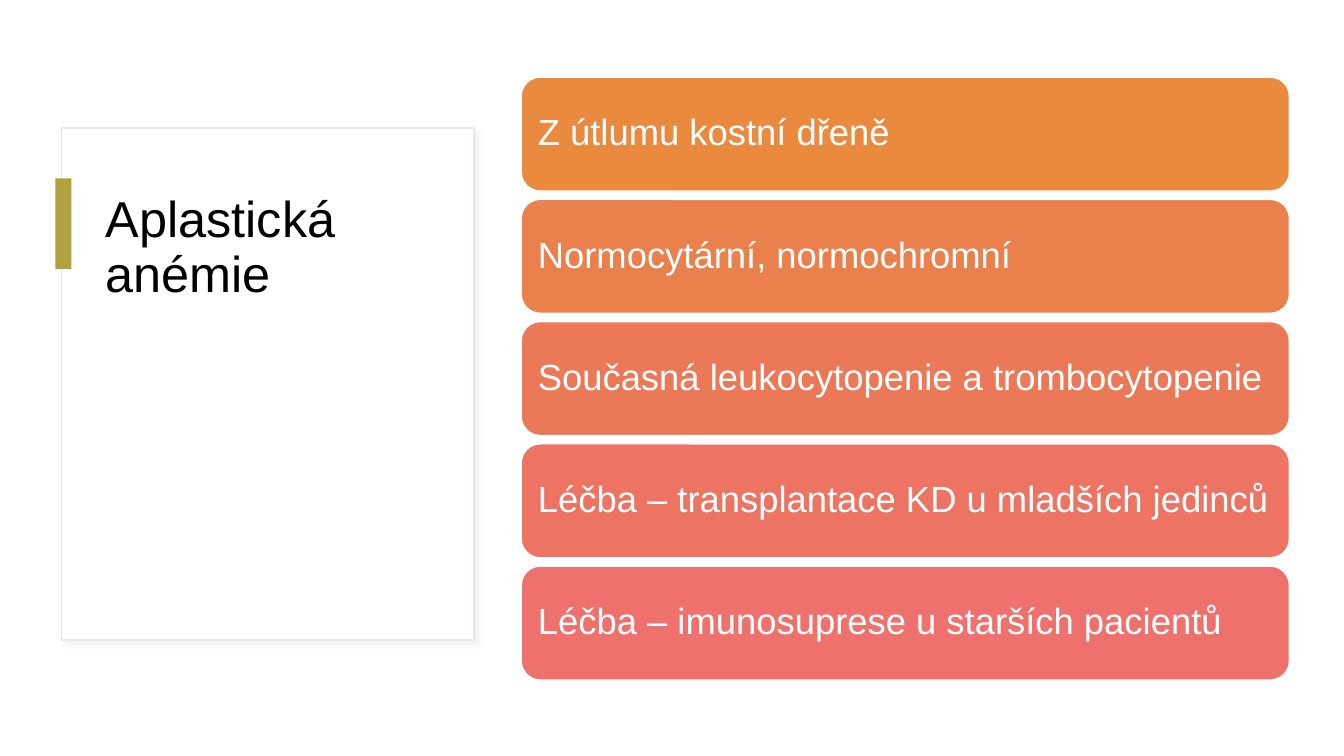
import dataclasses

import lxml.etree
import pptx
import pptx.dml.color
import pptx.enum.shapes
import pptx.enum.text
import pptx.oxml.ns
import pptx.util

SHAPES = pptx.enum.shapes.MSO_SHAPE
ANCHORS = pptx.enum.text.MSO_ANCHOR
COLUMNS = ROWS = 100


@dataclasses.dataclass(frozen=True)
class Theme:
    font: str = "Arial"
    title_size: int = 36
    bar_size: int = 26
    title_color: str = "000000"
    paper: str = "FFFFFF"
    accent: str = "B1A141"
    card_line: str = "F0E5E5"
    shadow: str = "D9D9D9"
    bar_fills: tuple = ("E98A3F", "EA804B", "EB7957", "ED7462", "EE716E")


def rgb(color):
    return pptx.dml.color.RGBColor.from_string(color)


class Page:
    """Draws on one slide; areas are (column, row, columns, rows)."""

    def __init__(self, deck, theme):
        self.theme = theme
        self.slide = deck.slides.add_slide(deck.slide_layouts[6])
        self.column = deck.slide_width / COLUMNS
        self.row = deck.slide_height / ROWS
        background = self.slide.background.fill
        background.solid()
        background.fore_color.rgb = rgb(theme.paper)

    def place(self, area):
        units = (self.column, self.row) * 2
        return [round(length * unit) for length, unit in zip(area, units)]

    def block(self, kind, area, fill, line=None):
        shape = self.slide.shapes.add_shape(kind, *self.place(area))
        shape.shadow.inherit = False
        shape.fill.solid()
        shape.fill.fore_color.rgb = rgb(fill)
        if line:
            shape.line.color.rgb = rgb(line)
            shape.line.width = pptx.util.Pt(1)
        else:
            shape.line.fill.background()
        return shape

    def card(self, area):
        theme = self.theme
        shape = self.block(SHAPES.RECTANGLE, area, theme.paper, theme.card_line)
        name = pptx.oxml.ns.qn
        effects = shape.element.spPr.find(name("a:effectLst"))
        shadow = lxml.etree.SubElement(
            effects, name("a:outerShdw"), blurRad=str(pptx.util.Pt(4)),
            dist=str(pptx.util.Pt(3)), dir=str(45 * 60000), algn="tl", rotWithShape="0")
        color = lxml.etree.SubElement(shadow, name("a:srgbClr"), val=theme.shadow)
        lxml.etree.SubElement(color, name("a:alpha"), val="30000")

    def add_text(self, frame, text, size, color, anchor):
        frame.word_wrap = True
        frame.vertical_anchor = anchor
        para = frame.paragraphs[0]
        para.alignment = pptx.enum.text.PP_ALIGN.LEFT
        para.line_spacing = 0.9
        span = para.add_run()
        span.text = text
        span.font.name = self.theme.font
        span.font.size = pptx.util.Pt(size)
        span.font.color.rgb = rgb(color)

    def title(self, area, text):
        box = self.slide.shapes.add_textbox(*self.place(area))
        self.add_text(box.text_frame, text, self.theme.title_size,
                      self.theme.title_color, ANCHORS.TOP)

    def bar(self, area, text, fill):
        shape = self.block(SHAPES.ROUNDED_RECTANGLE, area, fill, self.theme.paper)
        frame = shape.text_frame
        inset = pptx.util.Inches(0.11)
        frame.margin_left = frame.margin_right = inset
        frame.margin_top = frame.margin_bottom = inset
        self.add_text(frame, text, self.theme.bar_size, self.theme.paper, ANCHORS.MIDDLE)


def main():
    deck = pptx.Presentation()
    deck.slide_width = pptx.util.Inches(13.33)
    deck.slide_height = pptx.util.Inches(7.5)
    theme = Theme()
    page = Page(deck, theme)

    page.card((4.6, 16.93, 30.67, 67.73))
    page.title((7.12, 25.07, 25.42, 51.33), "Aplastická anémie")
    page.block(SHAPES.RECTANGLE, (4.12, 23.6, 1.2, 12), theme.accent)

    facts = (
        "Z útlumu kostní dřeně",
        "Normocytární, normochromní",
        "Současná leukocytopenie a trombocytopenie",
        "Léčba – transplantace KD u mladších jedinců",
        "Léčba – imunosuprese u starších pacientů",
    )
    first_row, pitch, height = 10.2, 16.17, 15.07
    for index, (fact, fill) in enumerate(zip(facts, theme.bar_fills)):
        page.bar((38.78, first_row + index * pitch, 57.16, height), fact, fill)

    deck.save("out.pptx")


if __name__ == "__main__":
    main()
